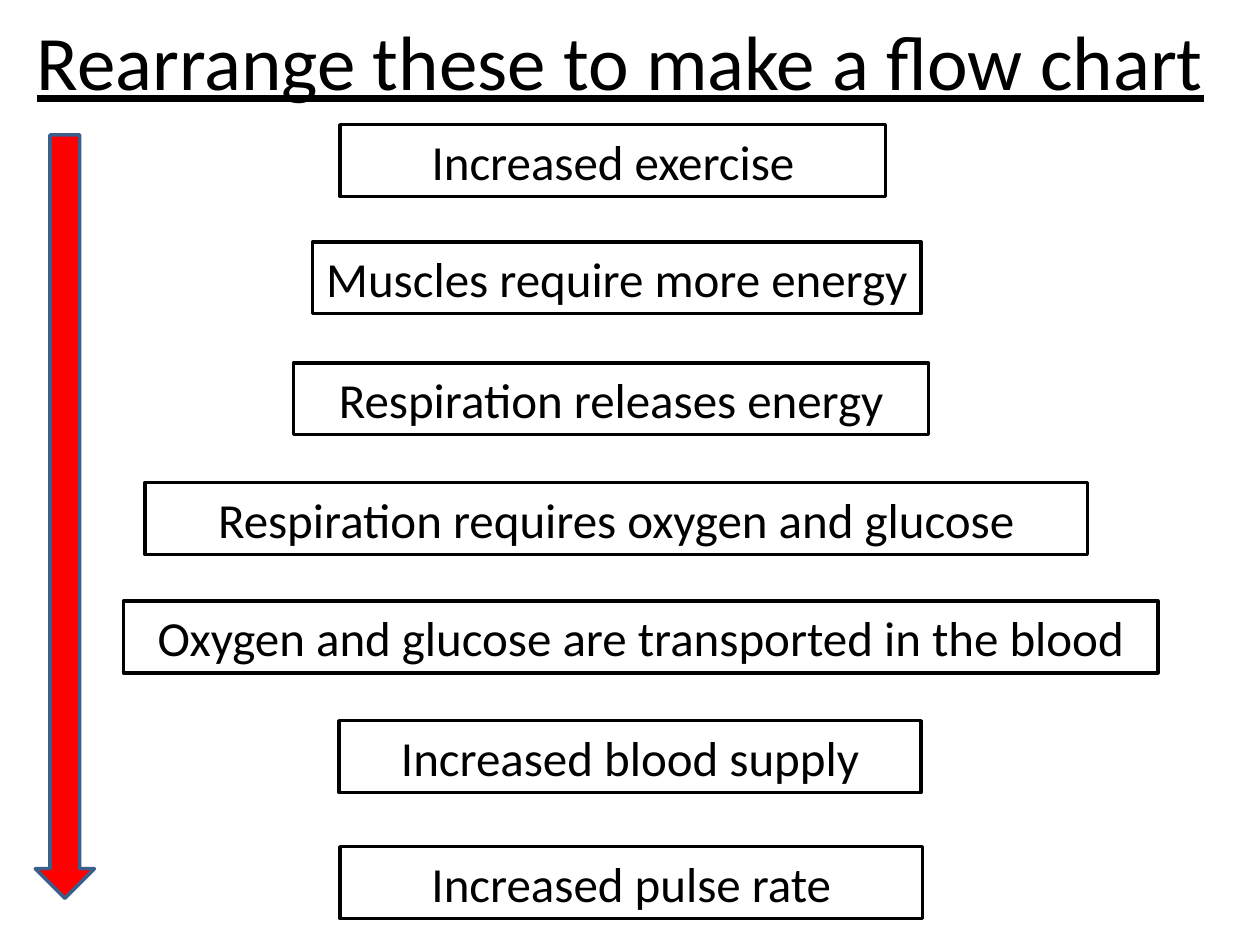
import pptx
import pptx.util
import pptx.dml.color
import pptx.enum.shapes
import pptx.enum.text

BLACK = pptx.dml.color.RGBColor(0x00, 0x00, 0x00)
RED = pptx.dml.color.RGBColor(0xFF, 0x00, 0x00)
BLUE = pptx.dml.color.RGBColor(0x3A, 0x5F, 0x8C)
CENTER = pptx.enum.text.PP_ALIGN.CENTER
MIDDLE = pptx.enum.text.MSO_ANCHOR.MIDDLE

prs = pptx.Presentation()
prs.slide_width = pptx.util.Inches(10)
prs.slide_height = pptx.util.Inches(7.5)
s = prs.slides.add_slide(prs.slide_layouts[5])


def place(left, top, width, height):
    """Turn percentages of the slide's width and height into lengths."""
    w, h = prs.slide_width / 100, prs.slide_height / 100
    return int(left * w), int(top * h), int(width * w), int(height * h)


def write(sp, text, size):
    tf = sp.text_frame
    tf.word_wrap = True
    tf.vertical_anchor = MIDDLE
    tf.margin_left = tf.margin_right = pptx.util.Inches(0.05)
    p = tf.paragraphs[0]
    p.text = text
    p.alignment = CENTER
    p.font.name = "Calibri"
    p.font.size = pptx.util.Pt(size)
    p.font.color.rgb = BLACK
    return p


title = s.shapes.title
title.left, title.top, title.width, title.height = place(1.2, 0.67, 96.1, 11.33)
p = write(title, "Rearrange these to make a flow chart", 44)
p.font.underline = True
title.text_frame.auto_size = pptx.enum.text.MSO_AUTO_SIZE.NONE

# Left, top and width of each step, in percent of the slide
STEPS = [
    ("Increased exercise", 27, 13.2, 43.3),
    ("Muscles require more energy", 24.8, 25.6, 48.3),
    ("Respiration releases energy", 23.3, 38.4, 50.4),
    ("Respiration requires oxygen and glucose", 11.5, 51.07, 74.8),
    ("Oxygen and glucose are transported in the blood", 9.8, 63.6, 82.1),
    ("Increased blood supply", 26.9, 76.27, 46.2),
    ("Increased pulse rate", 27, 89.6, 46.2),
]
STEP_HEIGHT = 7.6

for text, left, top, width in STEPS:
    sp = s.shapes.add_textbox(*place(left, top, width, STEP_HEIGHT))
    sp.line.color.rgb = BLACK
    sp.line.width = pptx.util.Pt(2)
    write(sp, text, 28)

arrow = s.shapes.add_shape(
    pptx.enum.shapes.MSO_SHAPE.DOWN_ARROW, *place(2.8, 14.27, 4.7, 80.8))
arrow.shadow.inherit = False
arrow.fill.solid()
arrow.fill.fore_color.rgb = RED
arrow.line.color.rgb = BLUE
arrow.line.width = pptx.util.Pt(2)

prs.save("out.pptx")
